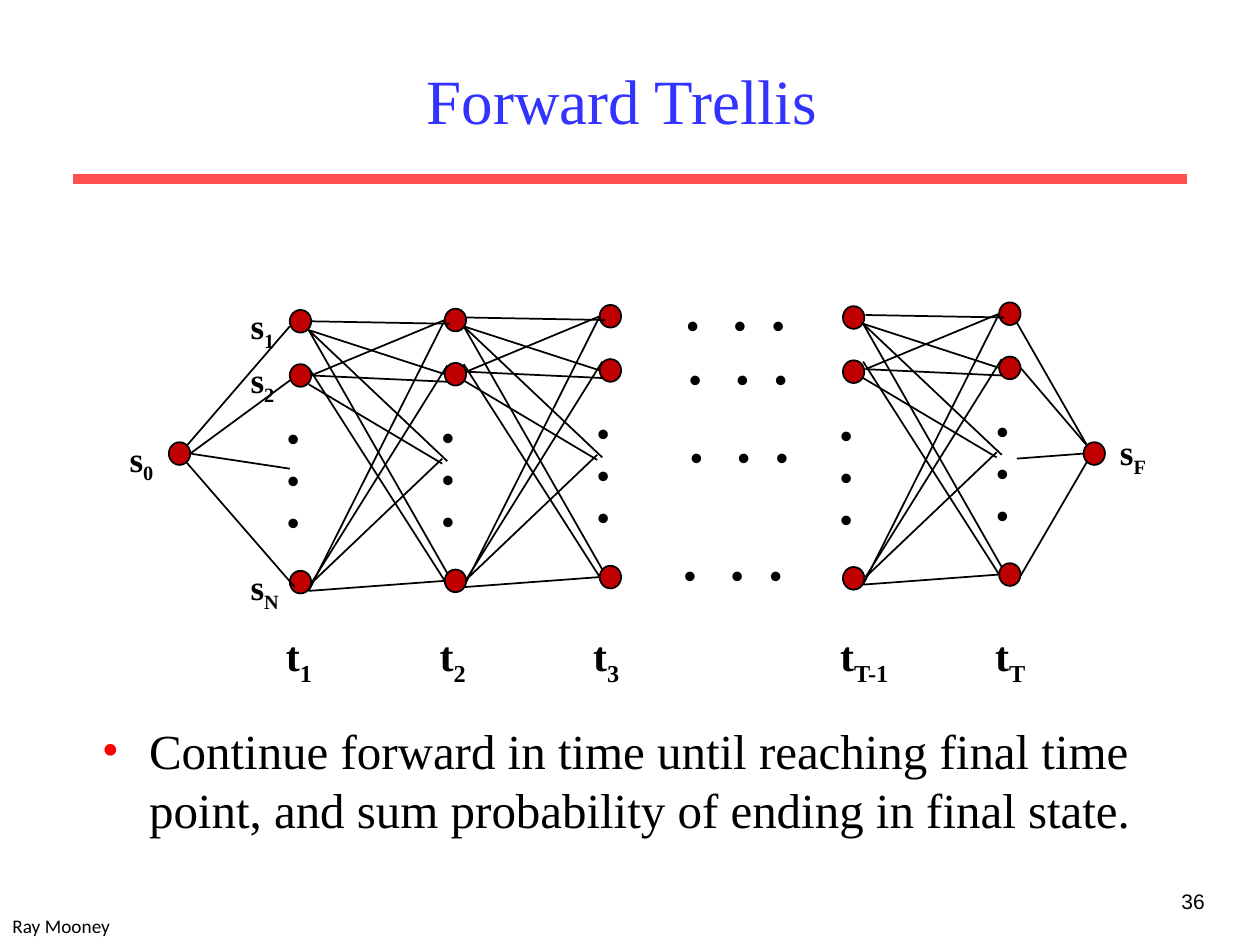
from collections import namedtuple

from lxml import etree
from pptx import Presentation
from pptx.dml.color import RGBColor
from pptx.enum.shapes import MSO_CONNECTOR, MSO_SHAPE
from pptx.enum.text import MSO_ANCHOR, MSO_AUTO_SIZE, PP_ALIGN
from pptx.oxml.ns import qn
from pptx.util import Inches, Pt

STRAIGHT = MSO_CONNECTOR.STRAIGHT
OVAL = MSO_SHAPE.OVAL
MIDDLE, TOP = MSO_ANCHOR.MIDDLE, MSO_ANCHOR.TOP
LEFT, CENTER, RIGHT = PP_ALIGN.LEFT, PP_ALIGN.CENTER, PP_ALIGN.RIGHT
FIT, FIXED = MSO_AUTO_SIZE.SHAPE_TO_FIT_TEXT, MSO_AUTO_SIZE.NONE

Box = namedtuple("Box", "left top width height")

COLUMNS, ROWS = 100, 75
UNIT = Inches(10) // COLUMNS

SERIF = "Times New Roman"
THEME = {
    "rule": "FF5050",
    "node": "C00000",
    "ink": "000000",
    "bullet": "FF0000",
    "rule_width": Pt(6),
    "edge_width": Pt(1),
    "subscript": "-25000",
    "title": ("3333FF", {"name": SERIF, "size": Pt(36)}),
    "body": ("000000", {"name": SERIF, "size": Pt(28)}),
    "state": ("000000", {"name": SERIF, "size": Pt(20), "bold": True}),
    "time": ("000000", {"name": SERIF, "size": Pt(24), "bold": True}),
    "number": ("000000", {"name": "Arial", "size": Pt(12)}),
    "credit": ("000000", {"name": "Calibri", "size": Pt(11)}),
}

NODE_WIDTH, NODE_HEIGHT = 1.7, 1.8
NODE_ROWS = (0, 4.3, 20.7)
EDGES = (
    (1.7, 0.9, 12.7, 1.1),
    (1.5, 1.6, 12.3, 5.1),
    (1.5, 1.6, 12.5, 20.9),
    (1.5, 1.6, 12.5, 12),
    (1.7, 5.2, 12.3, 0.8),
    (1.7, 5.2, 12.5, 5.7),
    (1.5, 4.6, 12.3, 21.5),
    (1.5, 22.3, 12.3, 0.8),
    (1.7, 21.7, 12.5, 4.4),
    (1.5, 22.3, 12.3, 21.5),
    (1.7, 21.7, 12.1, 11.8),
    (1.5, 5.9, 12.1, 12.2),
)
START_EDGES = (
    (1.4, 0.3, 9.6, -9.2),
    (1.7, 0.9, 9.6, -4.9),
    (1.4, 1.6, 10, 11.5),
    (1.7, 0.9, 9.6, 2.1),
)
FINAL_EDGES = (
    (-5.3, -9.5, 0.3, 0.3),
    (-5, -5.9, 0.3, 0.3),
    (-5, 10.6, 0.3, 1.5),
    (-5.3, 1.3, 0, 0.9),
)


def grid(*counts):
    return [round(count * UNIT) for count in counts]


def add_span(para, text, style, subscript=False):
    colour, formats = THEME[style]
    span = para.add_run()
    span.text = text
    for name, value in formats.items():
        setattr(span.font, name, value)
    span.font.color.rgb = RGBColor.from_string(colour)
    if subscript:
        span._r.get_or_add_rPr().set("baseline", THEME["subscript"])


def add_text(shapes, box, lines, style, align=LEFT, anchor=TOP, wrap=False):
    frame = shapes.add_textbox(*grid(*box)).text_frame
    settings = {
        "word_wrap": wrap,
        "auto_size": FIXED if wrap else FIT,
        "vertical_anchor": anchor,
    }
    for name, value in settings.items():
        setattr(frame, name, value)
    for index, (base, subscript) in enumerate(lines):
        para = frame.add_paragraph() if index else frame.paragraphs[0]
        para.alignment = align
        add_span(para, base, style)
        if subscript:
            add_span(para, subscript, style, True)
    return frame.paragraphs[0]


def add_line(shapes, ends, colour, width):
    line = shapes.add_connector(STRAIGHT, *grid(*ends))
    line.line.color.rgb = RGBColor.from_string(THEME[colour])
    line.line.width = THEME[width]
    etree.SubElement(line._element.spPr, qn("a:effectLst"))


def add_edges(shapes, left, top, edges):
    for x1, y1, x2, y2 in edges:
        ends = (left + x1, top + y1, left + x2, top + y2)
        add_line(shapes, ends, "ink", "edge_width")


def add_node(shapes, left, top):
    node = shapes.add_shape(OVAL, *grid(left, top, NODE_WIDTH, NODE_HEIGHT))
    node.shadow.inherit = False
    node.fill.solid()
    node.fill.fore_color.rgb = RGBColor.from_string(THEME["node"])
    node.line.color.rgb = RGBColor.from_string(THEME["ink"])
    node.line.width = THEME["edge_width"]


def add_column(shapes, left, top):
    for row in NODE_ROWS:
        add_node(shapes, left, top + row)
    dots = Box(left - 1.2, top + 8, 3.3, 11.1)
    add_text(shapes, dots, [("•", "")] * 3, "state")


def add_ellipsis(shapes, left, top):
    box = Box(left, top, 10.8, 4.4)
    para = add_text(shapes, box, [("•\t•\t•", "")], "state")
    tabs = etree.SubElement(para._p.get_or_add_pPr(), qn("a:tabLst"))
    for stop in grid(3.75, 6.8):
        etree.SubElement(tabs, qn("a:tab"), pos=str(stop), algn="l")


def add_header(shapes, box):
    title = Box(box.left + 1.7, box.top, 85, 10.8)
    add_text(shapes, title, [("Forward Trellis ", "")], "title", CENTER, MIDDLE, True)
    bottom = box.top + box.height
    ends = (box.left, bottom, box.left + box.width, bottom)
    add_line(shapes, ends, "rule", "rule_width")


def add_trellis(shapes, box):
    left, top = box.left, box.top
    late, final = shapes.add_group_shape().shapes, shapes.add_group_shape().shapes
    columns = (
        (shapes, 13.7, 0.6), (shapes, 26, 0.5), (late, 38.3, 0.2),
        (shapes, 57.6, 0.3), (final, 70, 0),
    )
    for target, x, y in columns:
        add_column(target, left + x, top + y)
    for target, x, y in ((shapes, 13.7, 0.6), (late, 26, 0.3), (final, 57.7, 0.1)):
        add_edges(target, left + x, top + y, EDGES)
    for x, edges in ((4.1, START_EDGES), (76.7, FINAL_EDGES)):
        add_node(shapes, left + x, top + 11.1)
        add_edges(shapes, left + x, top + 11.1, edges)
    states = (
        ("1", 9.6, -0.3, 4), ("2", 9.6, 4, 4), ("N", 9.6, 20.4, 4.5),
        ("0", 0, 10.2, 4), ("F", 78.6, 9.7, 4.3),
    )
    for subscript, x, y, width in states:
        label = Box(left + x, top + y, width, 4.4)
        add_text(shapes, label, [("s", subscript)], "state")
    times = (
        ("1", 12.4, 4.3), ("2", 24.6, 4.3), ("3", 36.8, 4.3),
        ("T-1", 56.4, 6.3), ("T", 68.7, 4.6),
    )
    for subscript, x, width in times:
        label = Box(left + x, top + box.height - 5, width, 5)
        add_text(shapes, label, [("t", subscript)], "time")
    for x, y in ((44.2, -0.4), (44.4, 3.9), (44.5, 10.1), (44, 19.4)):
        add_ellipsis(shapes, left + x, top + y)


def add_body(shapes, box):
    text = (
        "Continue forward in time until reaching final time point, "
        "and sum probability of ending in final state."
    )
    para = add_text(shapes, box, [(text, "")], "body", wrap=True)
    settings = para._p.get_or_add_pPr()
    indent = grid(3.75)[0]
    for name, value in {"marL": indent, "indent": -indent}.items():
        settings.set(name, str(value))
    colour = etree.SubElement(settings, qn("a:buClr"))
    etree.SubElement(colour, qn("a:srgbClr"), val=THEME["bullet"])
    etree.SubElement(settings, qn("a:buFont"), typeface=SERIF)
    etree.SubElement(settings, qn("a:buChar"), char="•")


def add_footer(shapes, box):
    number = Box(box.left + 75.8, box.top, 20.8, 5)
    add_text(shapes, number, [("36", "")], "number", RIGHT, wrap=True)
    credit = Box(box.left, box.top + box.height - 2.9, 9.9, 2.9)
    add_text(shapes, credit, [("Ray Mooney", "")], "credit")


def main():
    deck = Presentation()
    deck.slide_width, deck.slide_height = grid(COLUMNS, ROWS)
    page = deck.slides.add_slide(deck.slide_layouts[6])
    add_header(page.shapes, Box(5.8, 2.5, 88.4, 11.7))
    add_trellis(page.shapes, Box(9.3, 24, 83, 30.5))
    add_body(page.shapes, Box(7.1, 56.7, 85, 18.3))
    add_footer(page.shapes, Box(0, 70, COLUMNS, 5))
    deck.save("out.pptx")


if __name__ == "__main__":
    main()
